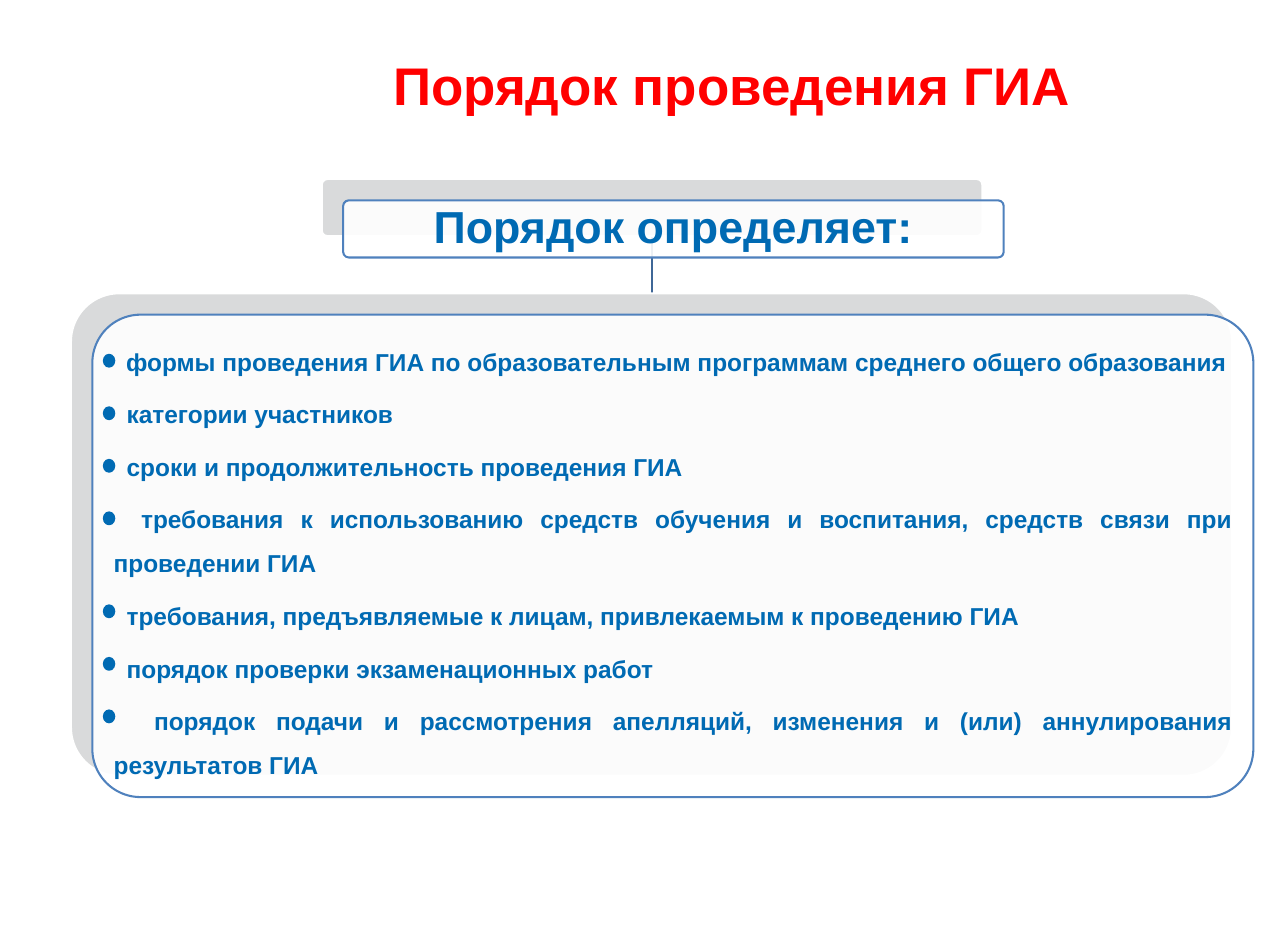
from dataclasses import dataclass

from lxml.etree import SubElement
from pptx import Presentation
from pptx.dml.color import RGBColor
from pptx.enum.shapes import MSO_CONNECTOR, MSO_SHAPE
from pptx.enum.text import MSO_ANCHOR, MSO_AUTO_SIZE, PP_ALIGN
from pptx.oxml.ns import qn
from pptx.util import Cm, Pt


@dataclass(frozen=True)
class Theme:
    font: str = "Arial"
    title_color: str = "FF0000"
    text_color: str = "006AB3"
    outline: str = "4F81BD"
    stem: str = "3F6797"
    backing: str = "D9DADB"
    white: str = "FFFFFF"
    title_size: int = 52
    header_size: int = 44
    list_size: int = 24
    line_width: int = 2


# Each item: text, first-line indent in cm, number of lines it takes
ITEMS = [
    ("формы проведения ГИА по образовательным программам среднего общего образования", 0.43, 1),
    ("категории участников", 0.45, 1),
    ("сроки и продолжительность проведения ГИА", 0.45, 1),
    ("требования к использованию средств обучения и воспитания, средств связи при проведении ГИА", 0.95, 2),
    ("требования, предъявляемые к лицам, привлекаемым к проведению ГИА", 0.45, 1),
    ("порядок проверки экзаменационных работ", 0.45, 1),
    ("порядок подачи и рассмотрения апелляций, изменения и (или) аннулирования результатов ГИА", 1.4, 2),
]


def write(frame, lines, *, font, size, color, align=PP_ALIGN.CENTER, spacing=None,
          space_after=None, indents=None, inset=(0.25, 0.25)):
    """Fill a text frame with one bold paragraph per line; inset is (side, top) in cm."""
    frame.word_wrap = True
    frame.auto_size = MSO_AUTO_SIZE.NONE
    frame.vertical_anchor = MSO_ANCHOR.MIDDLE
    frame.margin_left = frame.margin_right = Cm(inset[0])
    frame.margin_top = frame.margin_bottom = Cm(inset[1])
    for index, line in enumerate(lines):
        paragraph = frame.paragraphs[0] if index == 0 else frame.add_paragraph()
        paragraph.alignment = align
        paragraph.line_spacing = spacing
        paragraph.space_after = space_after
        if indents:
            properties = paragraph._p.get_or_add_pPr()
            properties.set("marL", "0")
            properties.set("indent", str(Cm(indents[index])))
        run = paragraph.add_run()
        run.text = line
        run.font.name = font
        run.font.size = Pt(size)
        run.font.bold = True
        run.font.color.rgb = RGBColor.from_string(color)


class SlideBuilder:
    def __init__(self, slide, theme):
        self.slide = slide
        self.theme = theme

    def title(self, text, left, top, width, height):
        title = self.slide.shapes.title
        title.left, title.top, title.width, title.height = map(Cm, (left, top, width, height))
        write(title.text_frame, [text], font=self.theme.font, size=self.theme.title_size,
              color=self.theme.title_color, inset=(0.48, 0.23))

    def shape(self, kind, left, top, width, height, fill, line):
        shape = self.slide.shapes.add_shape(kind, *map(Cm, (left, top, width, height)))
        shape.shadow.inherit = False
        shape.fill.solid()
        shape.fill.fore_color.rgb = RGBColor.from_string(fill)
        shape.line.color.rgb = RGBColor.from_string(line)
        shape.line.width = Pt(self.theme.line_width)
        return shape

    def card(self, left, top, width, height, lines, **text_format):
        """Draw a grey backing and, shifted over it, a translucent white card with text."""
        theme, shift = self.theme, 0.74
        kind = MSO_SHAPE.ROUNDED_RECTANGLE
        backing = self.shape(kind, left, top, width, height, theme.backing, theme.white)
        front = self.shape(kind, left + shift, top + shift, width, height,
                           theme.white, theme.outline)
        for shape in (backing, front):
            shape.adjustments[0] = 0.1
        color = front.fill._xPr.find(qn("a:solidFill"))[0]
        SubElement(color, qn("a:alpha")).set("val", "90000")
        write(front.text_frame, lines, font=theme.font, color=theme.text_color, **text_format)

    def stem(self, x, top, bottom):
        connector = self.slide.shapes.add_connector(
            MSO_CONNECTOR.STRAIGHT, Cm(x), Cm(top), Cm(x), Cm(bottom))
        connector.line.color.rgb = RGBColor.from_string(self.theme.stem)
        connector.line.width = Pt(self.theme.line_width)
        SubElement(connector._element.spPr, qn("a:effectLst"))

    def dot(self, left, top):
        color = self.theme.text_color
        self.shape(MSO_SHAPE.FLOWCHART_CONNECTOR, left, top, 0.36, 0.41, color, color)


def main():
    theme = Theme()
    presentation = Presentation()
    presentation.slide_width, presentation.slide_height = Cm(44.63), Cm(32.49)
    slide = presentation.slides.add_slide(presentation.slide_layouts[5])
    builder = SlideBuilder(slide, theme)

    builder.title("Порядок проведения ГИА", 8.31, 0.84, 34.09, 4.19)
    builder.stem(22.58, 8.18, 10.16)
    builder.card(11.15, 6.2, 22.89, 1.98, ["Порядок определяет:"],
                 size=theme.header_size, spacing=0.9, inset=(0.46, 0.46))
    builder.card(2.46, 10.16, 40.23, 16.71, [text for text, _, _ in ITEMS],
                 size=theme.list_size, align=PP_ALIGN.JUSTIFY, spacing=1.5,
                 space_after=Pt(0.35 * theme.list_size),
                 indents=[indent for _, indent, _ in ITEMS])

    row_step, extra_line = 1.82, 1.4
    top = 12.29
    for _, _, line_count in ITEMS:
        builder.dot(3.6, top)
        top += row_step + (line_count - 1) * extra_line

    presentation.save("out.pptx")


if __name__ == "__main__":
    main()
